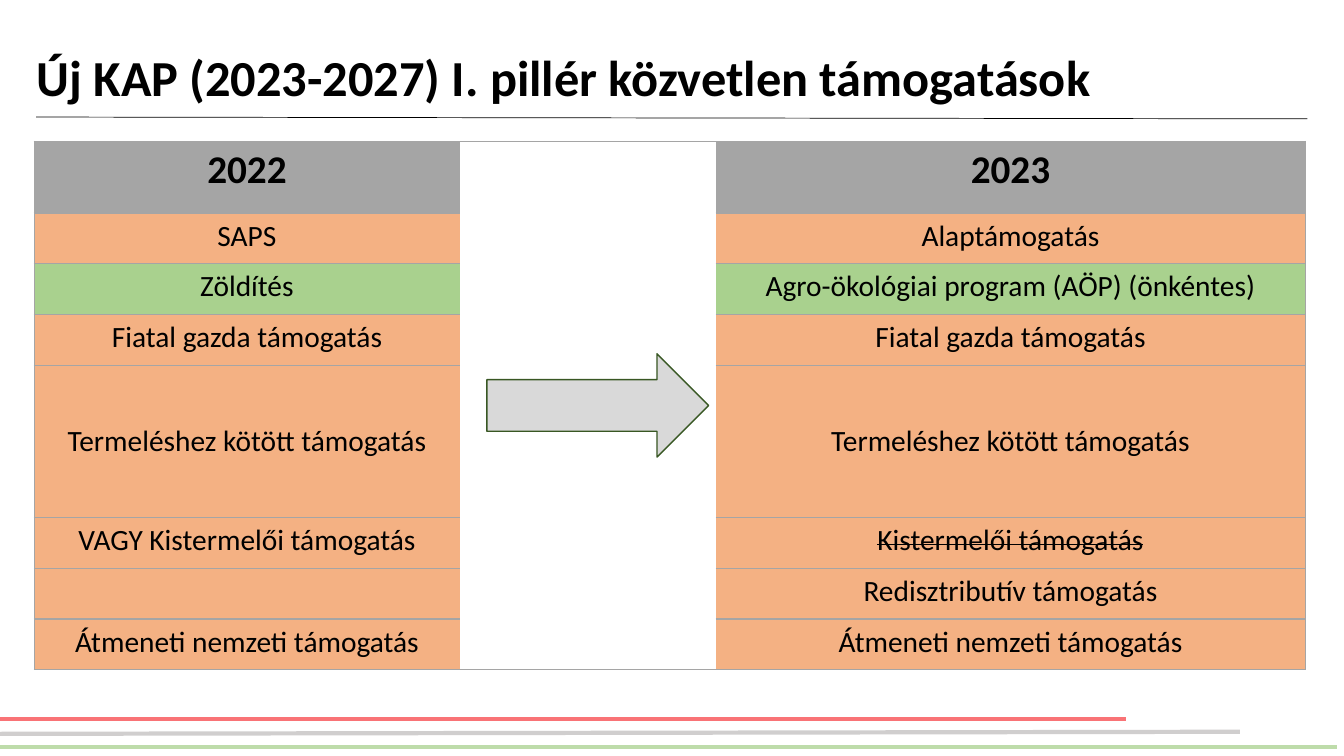
"""Build the slide comparing the 2022 and 2023 direct payment schemes."""
from dataclasses import dataclass

import pptx
import pptx.dml.color
import pptx.enum.shapes
import pptx.enum.text
import pptx.oxml
import pptx.oxml.ns
import pptx.presentation
import pptx.slide
import pptx.table
import pptx.util

Pt = pptx.util.Pt
RGBColor = pptx.dml.color.RGBColor
MIDDLE = pptx.enum.text.MSO_ANCHOR.MIDDLE

FONT = "Calibri"
BLACK = RGBColor(0, 0, 0)
WHITE = RGBColor(255, 255, 255)
GREY = RGBColor(0xA5, 0xA5, 0xA5)
ORANGE = RGBColor(0xF4, 0xB1, 0x83)
GREEN = RGBColor(0xA9, 0xD1, 0x8E)
ARROW_FILL = RGBColor(0xD9, 0xD9, 0xD9)
ARROW_LINE = RGBColor(0x38, 0x57, 0x23)
STRIPE_RED = RGBColor(0xF9, 0x73, 0x76)
STRIPE_GREEN = RGBColor(0xBE, 0xDC, 0xAA)
STRIPE_GREY = RGBColor(0xD0, 0xCE, 0xCE)

ROW_HEIGHT = 36.2
COLUMN_WIDTHS = (303.8, 182.9, 421.2)


@dataclass(frozen=True)
class Rule:
    """A straight decorative line."""
    x1: float
    y1: float
    x2: float
    y2: float
    color: RGBColor
    width: float


@dataclass(frozen=True)
class Scheme:
    """One table row pairing the 2022 scheme with its 2023 successor."""
    before: str
    after: str
    fill: RGBColor = ORANGE
    height: float = ROW_HEIGHT
    size: float = 21
    bold: bool = False
    centred: bool = False
    abolished: bool = False


RULES = (
    Rule(0, 513.4, 804.2, 513.4, STRIPE_RED, 3),
    Rule(0, 533.5, 954.7, 533.5, STRIPE_GREEN, 3),
    Rule(0, 524.2, 885.6, 522.7, STRIPE_GREY, 3),
    Rule(25.9, 83.6, 933.8, 84.9, BLACK, 0.5),
)

SCHEMES = (
    Scheme("2022", "2023", GREY, 51.2, 28, bold=True),
    Scheme("SAPS", "Alaptámogatás"),
    Scheme("Zöldítés", "Agro-ökológiai program (AÖP) (önkéntes)", GREEN),
    Scheme("Fiatal gazda támogatás", "Fiatal gazda támogatás"),
    Scheme("Termeléshez kötött támogatás", "Termeléshez kötött támogatás",
           height=109, centred=True),
    Scheme("VAGY Kistermelői támogatás", "Kistermelői támogatás", abolished=True),
    Scheme("", "Redisztributív támogatás"),
    Scheme("Átmeneti nemzeti támogatás", "Átmeneti nemzeti támogatás"),
)


def draw_rule(slide: pptx.slide.Slide, rule: Rule) -> None:
    """Draw one decorative line without a shadow."""
    line = slide.shapes.add_connector(
        pptx.enum.shapes.MSO_CONNECTOR.STRAIGHT,
        Pt(rule.x1), Pt(rule.y1), Pt(rule.x2), Pt(rule.y2))
    line.line.color.rgb = rule.color
    line.line.width = Pt(rule.width)
    properties = line._element.spPr
    properties.append(properties.makeelement(pptx.oxml.ns.qn("a:effectLst"), {}))


def style_cell(cell: pptx.table._Cell, fill: RGBColor, sides: str) -> None:
    """Border the given sides (letters of LRTB) in grey and fill the cell."""
    properties = cell._tc.get_or_add_tcPr()
    for side in "LRTB":
        paint = (f'<a:solidFill><a:srgbClr val="{GREY}"/></a:solidFill>'
                 if side in sides else "<a:noFill/>")
        properties.append(pptx.oxml.parse_xml(
            f'<a:ln{side} {pptx.oxml.ns.nsdecls("a")} w="12700">{paint}</a:ln{side}>'))
    cell.fill.solid()
    cell.fill.fore_color.rgb = fill


def style_font(paragraph: pptx.text.text._Paragraph, size: float, bold: bool) -> None:
    """Set the shared typeface in black at the given size."""
    paragraph.font.name = FONT
    paragraph.font.size = Pt(size)
    paragraph.font.bold = bold
    paragraph.font.color.rgb = BLACK


def write_scheme(cell: pptx.table._Cell, text: str, scheme: Scheme) -> None:
    """Write a centred scheme name into a cell."""
    name = cell.text_frame.paragraphs[0]
    name.alignment = pptx.enum.text.PP_ALIGN.CENTER
    if text:
        name.add_run().text = text
    style_font(name, scheme.size, scheme.bold)
    if scheme.centred:
        cell.vertical_anchor = MIDDLE


def draw_schemes(slide: pptx.slide.Slide) -> None:
    """Draw the comparison table with its open middle column."""
    table = slide.shapes.add_table(
        len(SCHEMES), len(COLUMN_WIDTHS), Pt(24.5), Pt(101),
        Pt(sum(COLUMN_WIDTHS)), Pt(sum(s.height for s in SCHEMES))).table
    table.first_row = False
    table.horz_banding = False
    for column, width in zip(table.columns, COLUMN_WIDTHS):
        column.width = Pt(width)
    for index, scheme in enumerate(SCHEMES):
        table.rows[index].height = Pt(scheme.height)
        before, gap, after = (table.cell(index, column) for column in range(3))
        style_cell(before, scheme.fill, "LTB")
        style_cell(gap, WHITE, "TB")
        style_cell(after, scheme.fill, "RTB")
        write_scheme(before, scheme.before, scheme)
        write_scheme(after, scheme.after, scheme)
        if scheme.abolished:
            struck = after.text_frame.paragraphs[0].runs[0]
            struck.font._element.set("strike", "sngStrike")
    table.cell(0, 1).merge(table.cell(len(SCHEMES) - 1, 1))


def draw_arrow(slide: pptx.slide.Slide) -> None:
    """Draw the arrow leading from 2022 to 2023."""
    arrow = slide.shapes.add_shape(
        pptx.enum.shapes.MSO_SHAPE.RIGHT_ARROW,
        Pt(347.8), Pt(252.7), Pt(158.4), Pt(73.8))
    arrow.shadow.inherit = False
    arrow.fill.solid()
    arrow.fill.fore_color.rgb = ARROW_FILL
    arrow.line.color.rgb = ARROW_LINE
    arrow.line.width = Pt(1)


def draw_title(slide: pptx.slide.Slide) -> None:
    """Write the slide title."""
    frame = slide.shapes.add_textbox(
        Pt(24.5), Pt(23.8), Pt(848.2), Pt(67)).text_frame
    frame.word_wrap = True
    frame.vertical_anchor = MIDDLE
    frame.margin_left, frame.margin_right = Pt(1.5), Pt(0)
    frame.margin_top = frame.margin_bottom = Pt(7.2)
    title = frame.paragraphs[0]
    title.text = "Új KAP (2023-2027) I. pillér közvetlen támogatások"
    title.line_spacing = 0.9
    style_font(title, 36, True)


def build() -> pptx.presentation.Presentation:
    """Assemble the presentation."""
    deck = pptx.Presentation()
    deck.slide_width, deck.slide_height = Pt(960), Pt(540)
    slide = deck.slides.add_slide(deck.slide_layouts[6])
    for rule in RULES:
        draw_rule(slide, rule)
    draw_schemes(slide)
    draw_arrow(slide)
    draw_title(slide)
    return deck


if __name__ == "__main__":
    build().save("out.pptx")
